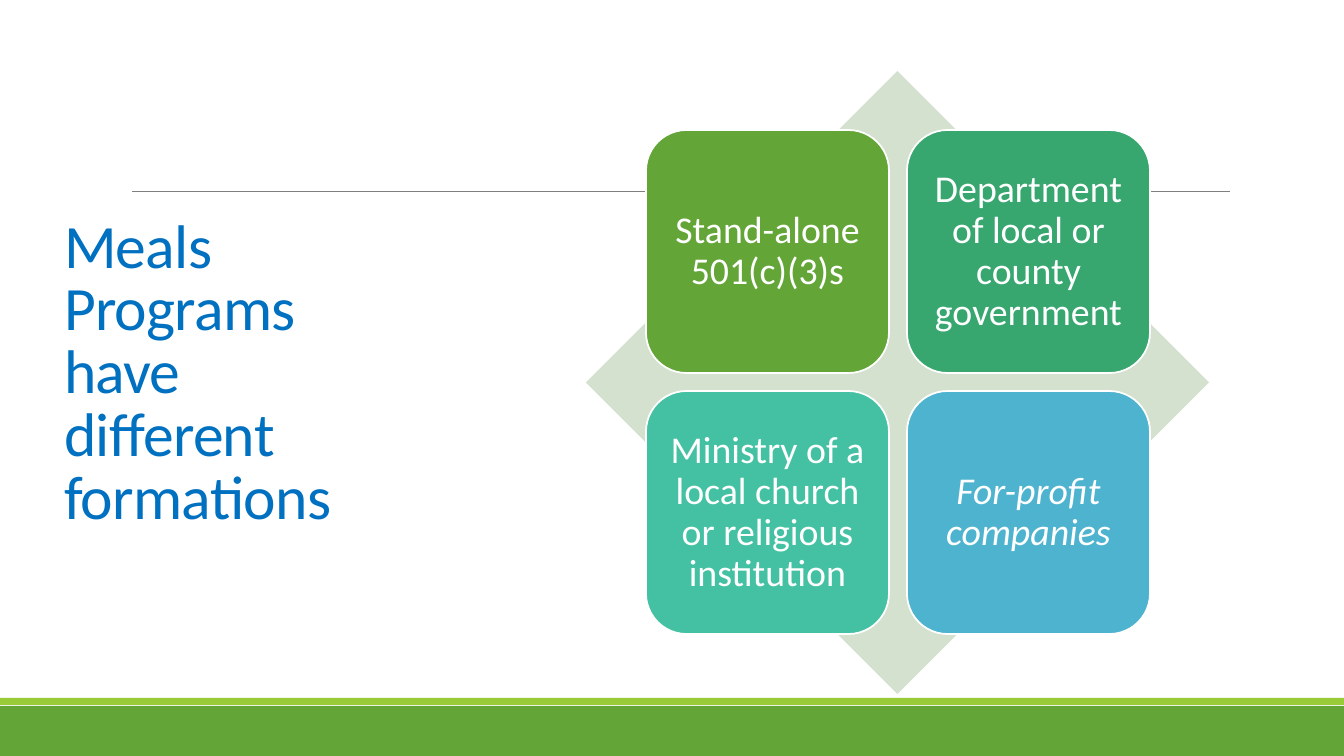
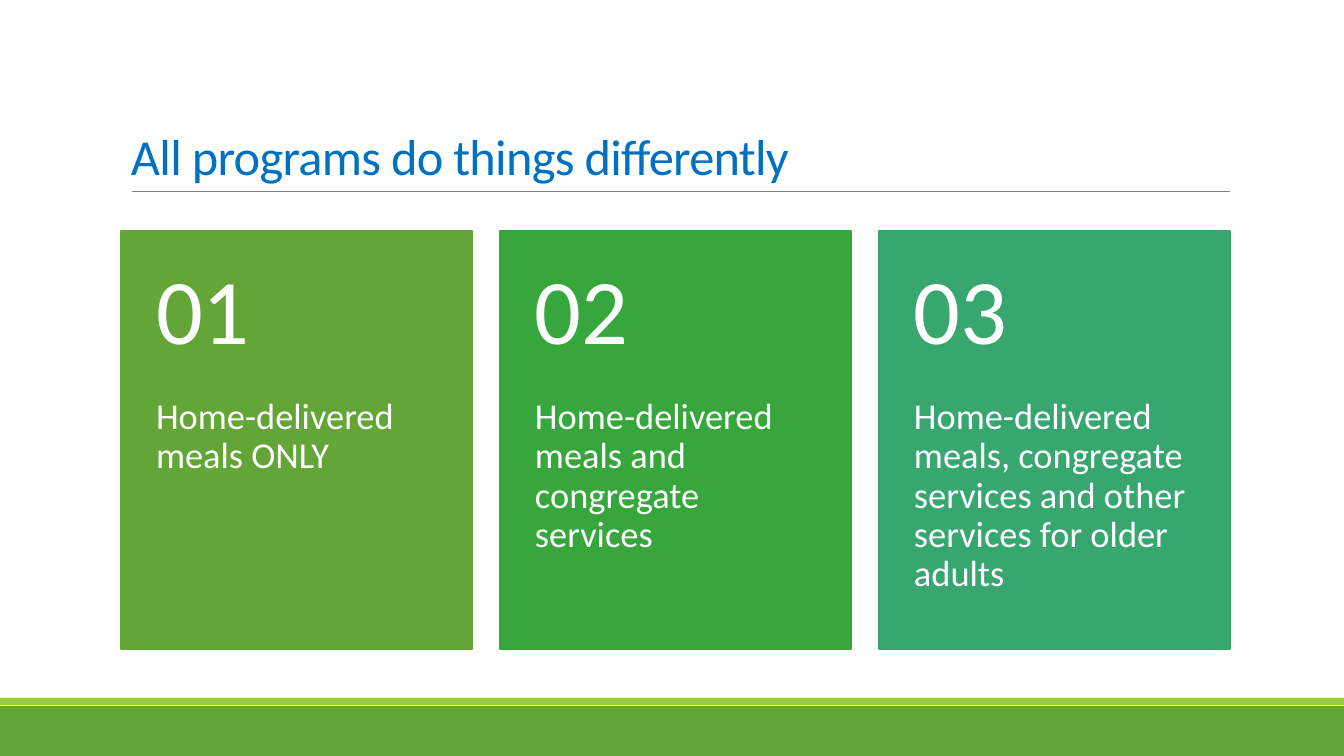
from dataclasses import dataclass

from lxml.etree import SubElement
from pptx import Presentation
from pptx.dml.color import RGBColor as RGB
from pptx.enum.shapes import MSO_CONNECTOR as LINK, MSO_SHAPE as KIND
from pptx.enum.text import MSO_ANCHOR as ANCHOR, MSO_AUTO_SIZE as FIT, PP_ALIGN as ALIGN
from pptx.oxml.ns import qn
from pptx.util import Emu, Pt


@dataclass(frozen=True)
class Theme:
    font: str = "Calibri"
    white: str = "FFFFFF"
    title: str = "0070C0"
    rule: str = "808080"
    lime: str = "99CB38"
    pale: str = "D3E1CE"
    leaf: str = "63A537"
    green: str = "37A63D"
    jade: str = "37A76F"
    teal: str = "44C1A3"
    blue: str = "4EB3CF"
    tall: int = 44
    head: int = 36
    tile: int = 27
    body: int = 26
    number: int = 66


theme = Theme()
SCALE = 12192000 / 1344


def px(*sizes):
    return [Emu(round(size * SCALE)) for size in sizes]


def block(slide, kind, box, fill, edge=None):
    shape = slide.shapes.add_shape(kind, *px(*box))
    shape.shadow.inherit = False
    shape.fill.solid()
    shape.fill.fore_color.rgb = RGB.from_string(fill)
    if edge:
        shape.line.color.rgb = RGB.from_string(edge)
        shape.line.width = Pt(1.25)
    else:
        shape.line.fill.background()
    return shape


def write(shape, text, size, color=theme.white, inset=(10, 5, 10, 5),
          anchor=ANCHOR.MIDDLE, align=ALIGN.LEFT, space=0.9):
    frame = shape.text_frame
    frame.text = text
    frame.word_wrap = True
    frame.auto_size = FIT.NONE
    frame.vertical_anchor = anchor
    (frame.margin_left, frame.margin_top,
     frame.margin_right, frame.margin_bottom) = px(*inset)
    para = frame.paragraphs[0]
    para.alignment = align
    para.line_spacing = space
    font = para.runs[0].font
    font.name = theme.font
    font.size = Pt(size)
    font.color.rgb = RGB.from_string(color)
    return font


deck = Presentation()
deck.slide_width, deck.slide_height = px(1344, 756)
layout = deck.slide_layouts[5]
for holder in list(layout.placeholders):
    if holder.placeholder_format.idx:
        holder.element.getparent().remove(holder.element)

heads = [
    ("Meals Programs have different formations", (54, 57, 340, 636), theme.tall, ANCHOR.MIDDLE),
    ("All programs do things differently", (121, 31, 1109, 160), theme.head, ANCHOR.BOTTOM),
]
slides = []
for text, box, size, anchor in heads:
    slide = deck.slides.add_slide(layout)
    title = slide.shapes.title
    title.left, title.top, title.width, title.height = px(*box)
    font = write(title, text, size, theme.title, anchor=anchor, space=0.85)
    font._element.set("spc", "-50")
    slides.append(slide)
forms, kinds = slides

base = block(forms, KIND.RECTANGLE, (0, 706, 1344, 50), theme.leaf)
strip = block(forms, KIND.RECTANGLE, (0, 698, 1344, 7), theme.lime)
rule = forms.shapes.add_connector(LINK.STRAIGHT, *px(132, 191, 1230, 191))
rule.line.color.rgb = RGB.from_string(theme.rule)
rule.line.width = Pt(0.5)
SubElement(rule.element.spPr, qn("a:effectLst"))
for part in (base, strip, rule):
    layout.shapes.element.append(part.element)

block(forms, KIND.DIAMOND, (586, 71, 623, 623), theme.pale)
tiles = [
    ("Stand-alone 501(c)(3)s", theme.leaf),
    ("Department of local or county government", theme.jade),
    ("Ministry of a local church or religious institution", theme.teal),
    ("For-profit companies", theme.blue),
]
for index, (text, fill) in enumerate(tiles):
    row, col = divmod(index, 2)
    box = (646 + 261 * col, 130 + 261 * row, 243, 243)
    tile = block(forms, KIND.ROUNDED_RECTANGLE, box, fill, theme.white)
    font = write(tile, text, theme.tile, inset=(11, 11, 11, 11), align=ALIGN.CENTER)
    if fill == theme.blue:
        font.italic = True

cards = [
    ("Home-delivered meals ONLY", theme.leaf),
    ("Home-delivered meals and congregate services", theme.green),
    ("Home-delivered meals, congregate services and other services for older adults", theme.jade),
]
for index, (text, fill) in enumerate(cards):
    left = 121 + 379 * index
    card = block(kinds, KIND.RECTANGLE, (left, 231, 351, 418), fill, fill)
    write(card, text, theme.body, inset=(35, 167, 35, 36), anchor=ANCHOR.TOP)
    number = kinds.shapes.add_textbox(*px(left, 231, 351, 167))
    write(number, f"{index + 1:02}", theme.number, inset=(35, 18, 35, 18))

deck.save("out.pptx")
